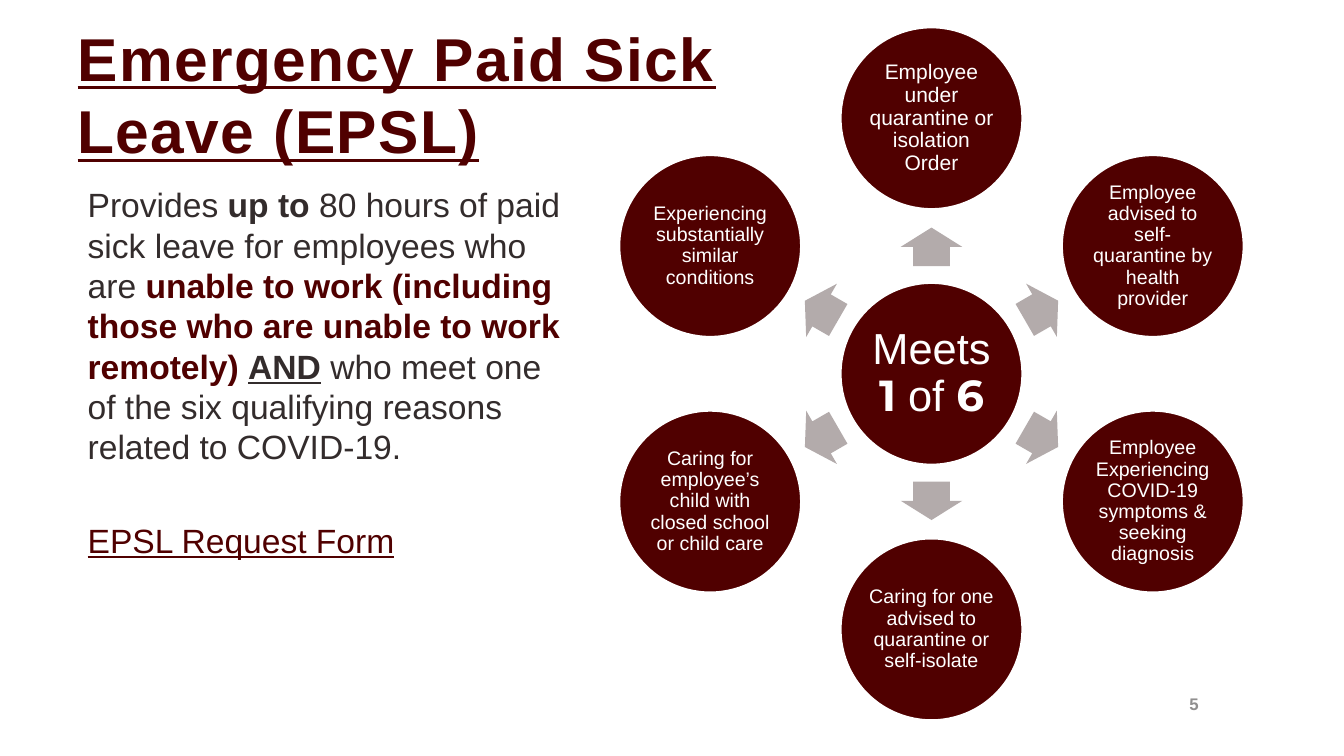
import math
import pptx
import pptx.util
import pptx.dml.color
import pptx.enum.shapes
import pptx.enum.text

Cm, Pt = pptx.util.Cm, pptx.util.Pt
SHAPE = pptx.enum.shapes.MSO_SHAPE
ALIGN = pptx.enum.text.PP_ALIGN
ANCHOR = pptx.enum.text.MSO_ANCHOR

HUES = {"maroon": "500000", "ink": "332C2C", "arrow": "B3ABAB",
        "page": "908F8F", "white": "FFFFFF"}
REASONS = [
    ("Employee under quarantine or isolation Order", 15),
    ("Employee advised to self-quarantine by health provider", 14),
    ("Employee Experiencing COVID-19 symptoms & seeking diagnosis", 14),
    ("Caring for one advised to quarantine or self-isolate", 14),
    ("Caring for employee’s child with closed school or child care", 14),
    ("Experiencing substantially similar conditions", 14),
]


def color(name):
    return pptx.dml.color.RGBColor.from_string(HUES[name])


def write(para, text, hue, size, **style):
    """Add one run with its format."""
    run = para.add_run()
    run.text = text
    run.font.color.rgb = color(hue)
    values = {"name": "Arial", "size": Pt(size), "bold": False, **style}
    for key, value in values.items():
        setattr(run.font, key, value)
    return run


def frame(shape, anchor, inset=None):
    """Set up the text frame and return its first paragraph."""
    text = shape.text_frame
    values = {"word_wrap": True, "vertical_anchor": anchor,
              "auto_size": pptx.enum.text.MSO_AUTO_SIZE.NONE}
    if inset is not None:
        for side in ("left", "top", "right", "bottom"):
            values["margin_" + side] = Cm(inset)
    for key, value in values.items():
        setattr(text, key, value)
    return text.paragraphs[0]


def title(slide, left, top, width, height):
    shape = slide.shapes.title
    box = {"left": left, "top": top, "width": width, "height": height}
    for key, value in box.items():
        setattr(shape, key, Cm(value))
    para = frame(shape, ANCHOR.MIDDLE)
    para.alignment = ALIGN.LEFT
    run = write(para, "Emergency Paid Sick Leave (EPSL)", "maroon", 43.2,
                bold=True, underline=True)
    run.font._element.set("spc", "100")


def body(slide, left, top, width, height):
    box = slide.shapes.add_textbox(Cm(left), Cm(top), Cm(width), Cm(height))
    para = frame(box, ANCHOR.TOP)
    write(para, "Provides ", "ink", 24)
    write(para, "up to ", "ink", 24, bold=True)
    write(para, "80 hours of paid sick leave for employees who are ", "ink", 24)
    write(para, "unable to work (including those who are unable to work remotely) ",
          "maroon", 24, bold=True)
    write(para, "AND", "ink", 24, bold=True, underline=True)
    write(para, " who meet one of the six qualifying reasons related to COVID-19.",
          "ink", 24)
    form = box.text_frame.add_paragraph()
    form.space_before = Pt(38)
    write(form, "EPSL Request Form", "maroon", 24, underline=True)


def place(slide, kind, mid_x, mid_y, width, height, hue):
    """Add a filled shape around a middle point."""
    shape = slide.shapes.add_shape(kind, Cm(mid_x - width / 2), Cm(mid_y - height / 2),
                                   Cm(width), Cm(height))
    shape.shadow.inherit = False
    shape.fill.solid()
    shape.fill.fore_color.rgb = color(hue)
    return shape


def disc(slide, mid_x, mid_y, size, inset):
    shape = place(slide, SHAPE.OVAL, mid_x, mid_y, size, size, "maroon")
    shape.line.color.rgb = color("white")
    shape.line.width = Pt(2)
    para = frame(shape, ANCHOR.MIDDLE, inset)
    para.alignment = ALIGN.CENTER
    para.line_spacing = 0.9
    return para


def wheel(slide, left, top, width, height):
    """Draw the hub, with reasons spread evenly around it."""
    size = 4.6
    mid_x, mid_y = left + width / 2, top + height / 2
    ring = (height - size) / 2
    hub = disc(slide, mid_x, mid_y, size, 0.1)
    write(hub, "Meets ", "white", 31)
    write(hub, "1", "white", 31, name="Montserrat", bold=True)
    write(hub, " of ", "white", 31)
    write(hub, "6", "white", 31, name="Montserrat", bold=True)
    for i, (text, points) in enumerate(REASONS):
        turn = 360 / len(REASONS) * i - 90
        cos, sin = math.cos(math.radians(turn)), math.sin(math.radians(turn))
        arrow = place(slide, SHAPE.RIGHT_ARROW, mid_x + 3.2 * cos,
                      mid_y + 3.2 * sin, 0.97, 1.55, "arrow")
        arrow.line.fill.background()
        arrow.rotation = turn % 360
        arrow.adjustments[0], arrow.adjustments[1] = 0.6, 0.5
        para = disc(slide, mid_x + ring * cos, mid_y + ring * sin, size, 0.05)
        write(para, text, "white", points)


def number(slide, left, top, width, height):
    box = slide.shapes.add_textbox(Cm(left), Cm(top), Cm(width), Cm(height))
    para = frame(box, ANCHOR.MIDDLE)
    para.alignment = ALIGN.RIGHT
    write(para, "5", "page", 12, bold=True)


def main():
    deck = pptx.Presentation()
    deck.slide_width, deck.slide_height = Cm(33.87), Cm(19.05)
    slide = deck.slides.add_slide(deck.slide_layouts[5])
    title(slide, 1.7, 0.76, 16.76, 3.18)
    body(slide, 1.96, 4.52, 12.5, 9.83)
    wheel(slide, 15.6, 0.68, 15.75, 17.48)
    number(slide, 22.56, 17.42, 7.9, 0.64)
    deck.save("out.pptx")


if __name__ == "__main__":
    main()
